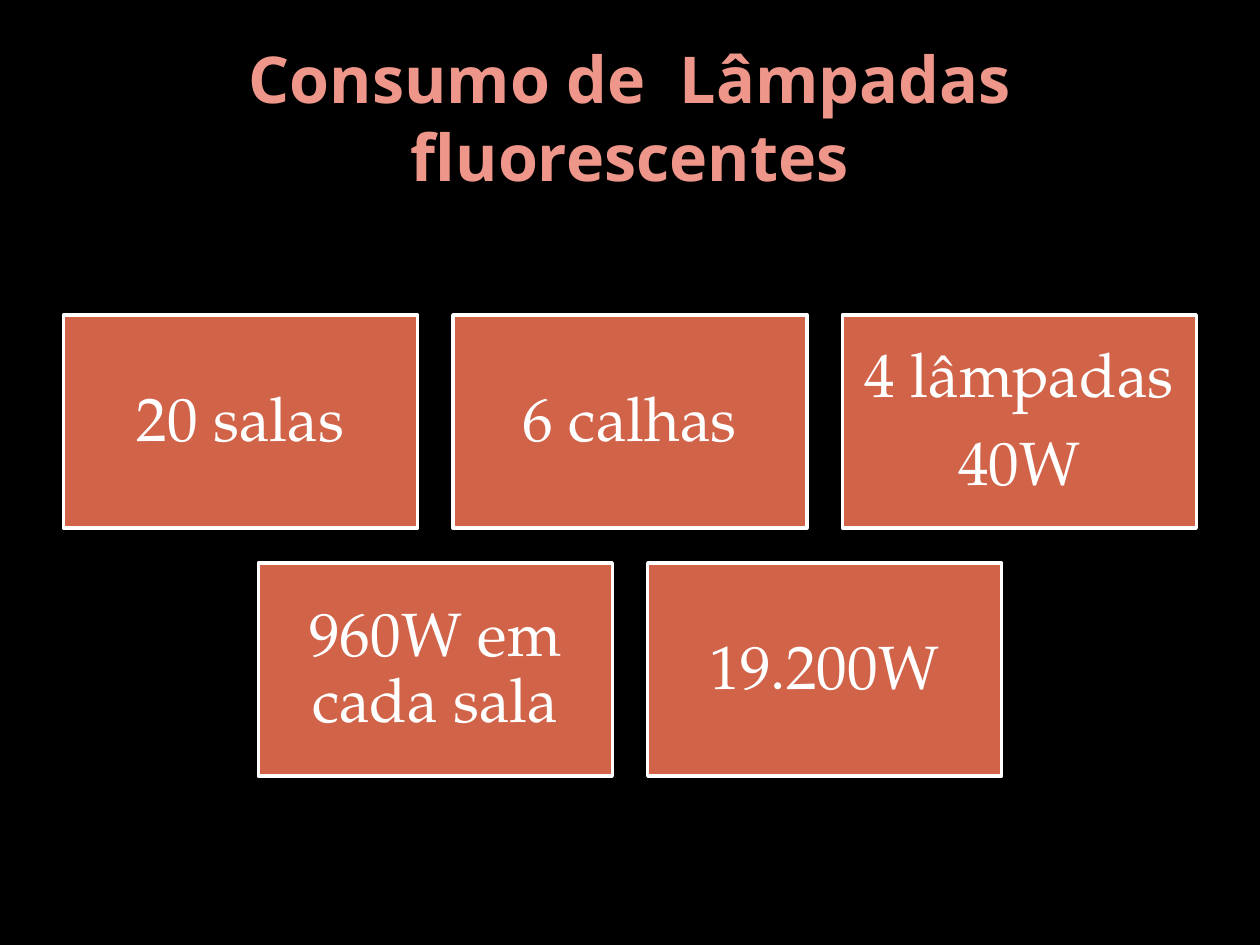
import pptx
import pptx.util
import pptx.dml.color
import pptx.enum.shapes
import pptx.enum.text

Inches = pptx.util.Inches
Pt = pptx.util.Pt
MIDDLE = pptx.enum.text.MSO_ANCHOR.MIDDLE
CENTER = pptx.enum.text.PP_ALIGN.CENTER


def color(code):
    return pptx.dml.color.RGBColor.from_string(code)


def style(para, font, size, code):
    para.alignment = CENTER
    para.font.name = font
    para.font.size = Pt(size)
    para.font.color.rgb = color(code)


deck = pptx.Presentation()
deck.slide_width = Inches(10)
deck.slide_height = Inches(7.5)
slide = deck.slides.add_slide(deck.slide_layouts[6])
slide.background.fill.solid()
slide.background.fill.fore_color.rgb = color("000000")

title = slide.shapes.add_textbox(Inches(0.5), Inches(0.3), Inches(9), Inches(1.25))
frame = title.text_frame
frame.word_wrap = True
frame.vertical_anchor = MIDDLE
frame.text = "Consumo de  Lâmpadas fluorescentes"
style(frame.paragraphs[0], "Noto Sans", 36.9, "EE968A")
frame.paragraphs[0].font.bold = True

# Each row of cards is centred on the slide.
rows = [
    ["20 salas", "6 calhas", "4 lâmpadas\n40W"],
    ["960W em cada sala", "19.200W"],
]
width, height, gap, top = 2.81, 1.69, 0.28, 2.5

for i, row in enumerate(rows):
    left = (10 - len(row) * width - (len(row) - 1) * gap) / 2
    for j, text in enumerate(row):
        card = slide.shapes.add_shape(
            pptx.enum.shapes.MSO_SHAPE.RECTANGLE,
            Inches(left + j * (width + gap)), Inches(top + i * (height + gap)),
            Inches(width), Inches(height))
        card.shadow.inherit = False
        card.fill.solid()
        card.fill.fore_color.rgb = color("D16349")
        card.line.color.rgb = color("FFFFFF")
        card.line.width = Pt(2)

        frame = card.text_frame
        frame.word_wrap = True
        frame.vertical_anchor = MIDDLE
        frame.margin_left = frame.margin_right = Inches(0.15)
        frame.margin_top = frame.margin_bottom = Inches(0.15)
        frame.text = text
        for para in frame.paragraphs:
            style(para, "TeX Gyre Pagella", 35, "FFFFFF")
            para.line_spacing = 0.9
            para.space_after = Pt(12.25)

deck.save("out.pptx")
